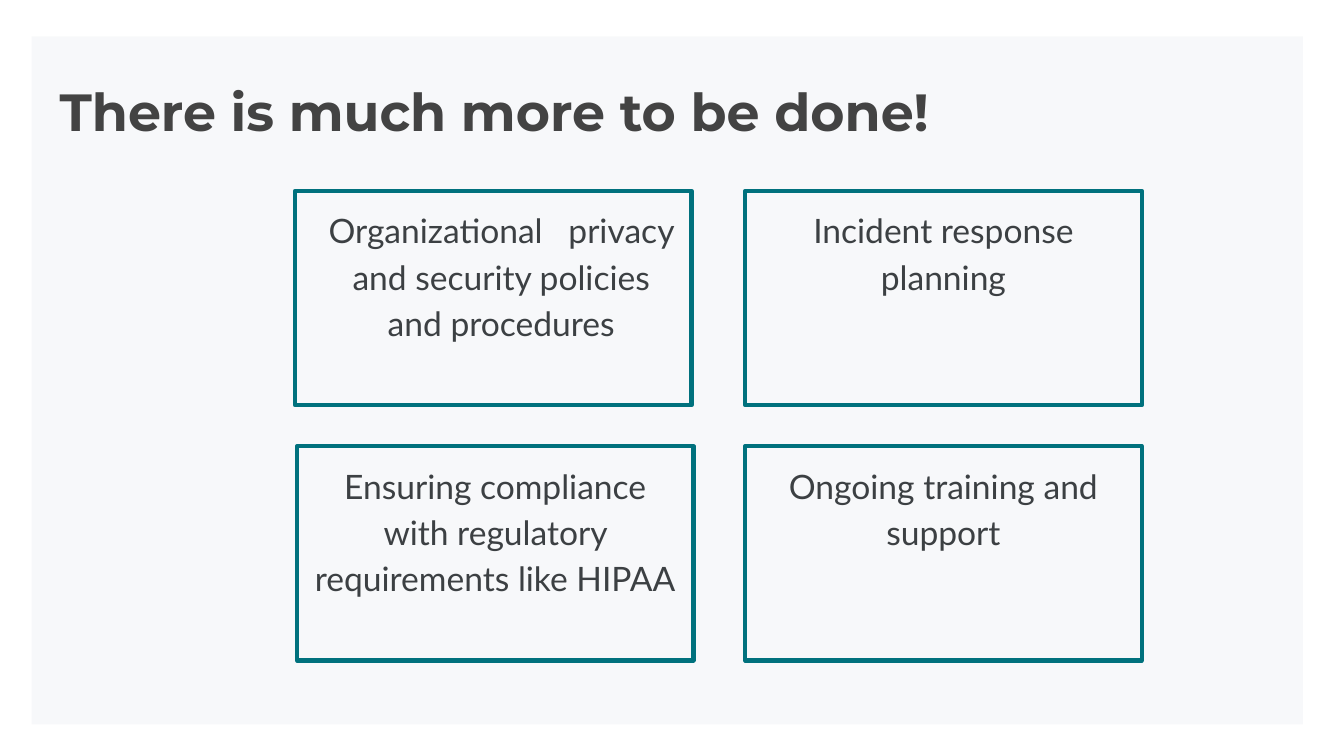
from pptx import Presentation
from pptx.dml.color import RGBColor
from pptx.enum.shapes import MSO_SHAPE
from pptx.enum.text import MSO_ANCHOR, PP_ALIGN
from pptx.oxml.ns import qn
from pptx.util import Pt
from lxml.etree import SubElement

PX = 4572  # EMU per px, 200 px to the inch

# Left, top and text of each card
CARDS = [
    (439, 284, "Organizational   privacy and security policies and procedures"),
    (442, 664, "Ensuring compliance with regulatory requirements like HIPAA"),
    (1109, 284, "Incident response planning"),
    (1109, 664, "Ongoing training and support"),
]


def color(code):
    return RGBColor.from_string(code)


def place(*box):
    return [n * PX for n in box]


def add_rect(slide, *box):
    rect = slide.shapes.add_shape(MSO_SHAPE.RECTANGLE, *place(*box))
    rect.shadow.inherit = False
    return rect


def write(shape, text, font, size, code, bold=False):
    frame = shape.text_frame
    frame.word_wrap = True
    frame.vertical_anchor = MSO_ANCHOR.TOP
    frame.margin_left = frame.margin_right = 20 * PX
    frame.margin_top = frame.margin_bottom = 20 * PX
    frame.text = text
    para = frame.paragraphs[0]
    face = para.runs[0].font
    face.name, face.size, face.bold = font, Pt(size), bold
    face.color.rgb = color(code)
    return para


def add_panel(slide):
    panel = add_rect(slide, 47, 54, 1892, 1024)
    panel.line.fill.background()
    panel.fill.solid()
    panel.fill.fore_color.rgb = color("073763")
    # Nearly clear fill: 3% opaque
    tint = panel.fill._xPr.find(qn("a:solidFill"))[0]
    SubElement(tint, qn("a:alpha")).set("val", "3000")


def add_title(slide, text):
    box = slide.shapes.add_textbox(*place(69, 98, 1864, 126))
    write(box, text, "Montserrat", 28, "434343", bold=True)


def add_card(slide, left, top, text):
    card = add_rect(slide, left, top, 590, 319)
    card.fill.background()
    card.line.color.rgb = color("00717D")
    card.line.width = Pt(2.25)
    para = write(card, text, "Lato", 18, "3C4043")
    para.alignment = PP_ALIGN.CENTER
    para.line_spacing = 1.15
    return para


def main():
    deck = Presentation()
    deck.slide_width, deck.slide_height = place(2000, 1125)
    slide = deck.slides.add_slide(deck.slide_layouts[6])

    # Backdrop and heading
    add_panel(slide)
    add_title(slide, "There is much more to be done!")

    # Cards; the first one has a small left indent
    paras = [add_card(slide, *card) for card in CARDS]
    paras[0]._p.get_or_add_pPr().set("marL", str(24 * PX))

    deck.save("out.pptx")


if __name__ == "__main__":
    main()
